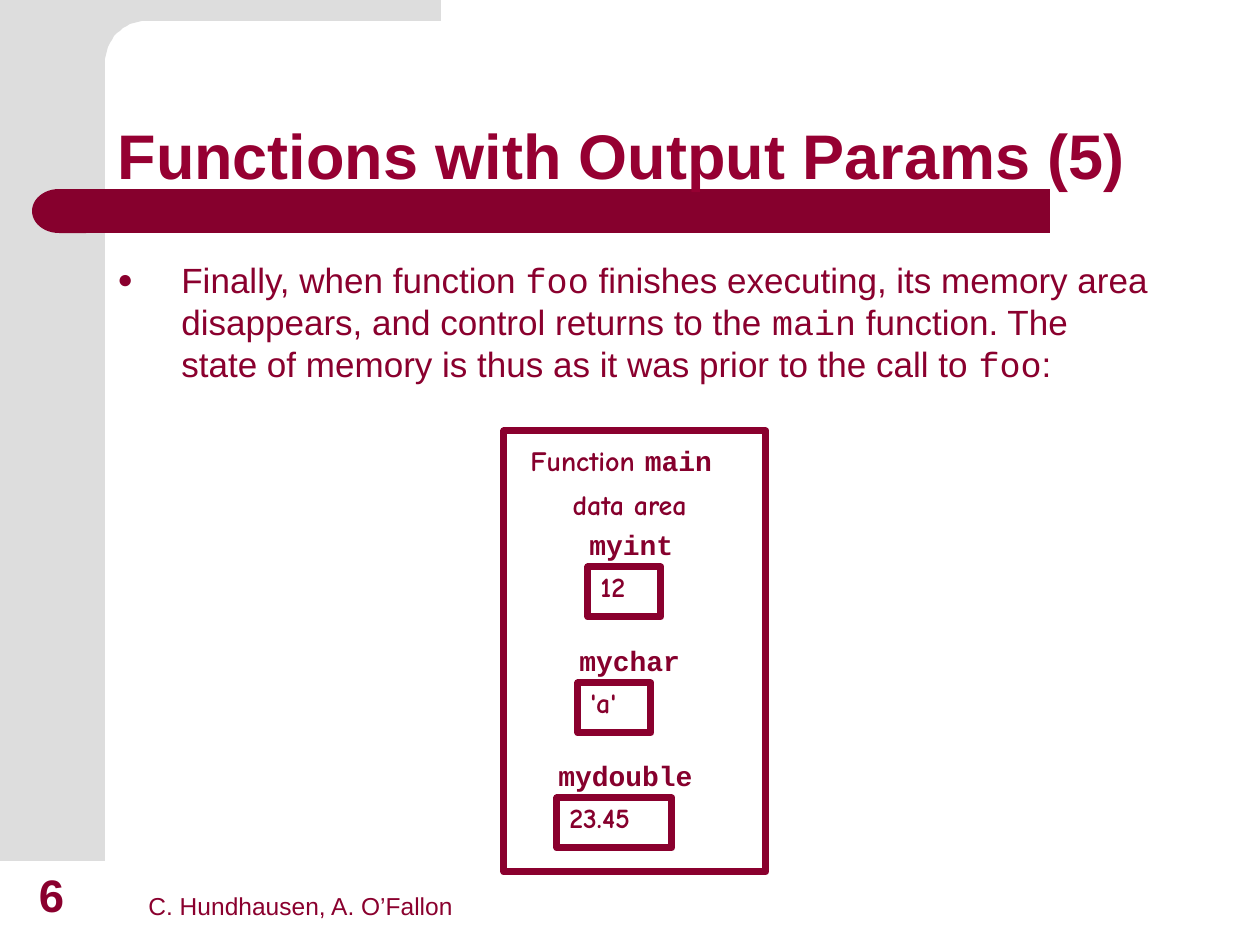
from dataclasses import dataclass
from math import cos, pi, sin

from lxml.etree import SubElement
from pptx import Presentation
from pptx.dml.color import RGBColor
from pptx.enum.shapes import MSO_SHAPE
from pptx.enum.text import MSO_ANCHOR, MSO_AUTO_SIZE, PP_ALIGN
from pptx.oxml.ns import qn
from pptx.util import Emu, Pt


@dataclass(frozen=True)
class Theme:
    gray: str = "DDDDDD"
    crimson: str = "86002D"
    ink: str = "8A002E"
    title: str = "960032"
    sans: str = "Arial"
    code: str = "Courier New"
    hand: str = "Comic Neue"
    title_size: int = 36
    number_size: int = 26
    body_size: int = 20
    label_size: int = 16
    footer_size: int = 14


theme = Theme()
PX = 914400 / 126  # EMU in one px


def frame(left, top, width, height):
    return [Emu(round(value * PX)) for value in (left, top, width, height)]


def write(box, *lines, size, color, bold=False, align=PP_ALIGN.LEFT,
          anchor=MSO_ANCHOR.TOP, spacing=None, gap=0, bullet=None, indent=0):
    """Fill a box; each line is a list of (text, font) spans."""
    text = box.text_frame
    text.word_wrap = True
    text.auto_size = MSO_AUTO_SIZE.NONE
    text.vertical_anchor = anchor
    for index, line in enumerate(lines):
        para = text.add_paragraph() if index else text.paragraphs[0]
        para.alignment = align
        para.line_spacing = spacing
        if index:
            para.space_before = Pt(gap)
        if bullet:
            properties = para._p.get_or_add_pPr()
            properties.set("marL", str(round(indent * PX)))
            properties.set("indent", str(-round(indent * PX)))
            SubElement(properties, qn("a:buSzPct")).set("val", "75000")
            SubElement(properties, qn("a:buFont")).set("typeface", theme.sans)
            SubElement(properties, qn("a:buChar")).set("char", bullet)
        for words, font in line:
            span = para.add_run()
            span.text = words
            span.font.name = font
            span.font.size = Pt(size)
            span.font.bold = bold
            span.font.color.rgb = RGBColor.from_string(color)


deck = Presentation()
deck.slide_width, deck.slide_height = frame(0, 0, 1260, 945)[2:]
page = deck.slides.add_slide(deck.slide_layouts[5])
shapes = page.shapes

# Gray side band and its rounded inner corner
band = shapes.add_shape(MSO_SHAPE.RECTANGLE, *frame(0, 0, 105, 861))
arc = [(146 - 41 * sin(step * pi / 32), 63 - 42 * cos(step * pi / 32))
       for step in range(17)]
outline = shapes.build_freeform(441, 0, scale=PX)
outline.add_line_segments([(441, 21), *arc, (105, 77), (63, 77), (63, 0)])
corner = outline.convert_to_shape()

# Crimson bar with a round left end
bar = shapes.add_shape(MSO_SHAPE.RECTANGLE, *frame(84, 189, 966, 44))
cap = shapes.add_shape(MSO_SHAPE.FLOWCHART_DELAY, *frame(32, 189, 54, 44))
cap.rotation = 180

for part, color in ((band, theme.gray), (corner, theme.gray),
                    (bar, theme.crimson), (cap, theme.crimson)):
    part.shadow.inherit = False
    part.fill.solid()
    part.fill.fore_color.rgb = RGBColor.from_string(color)
    part.line.fill.background()

# Title, in front of the bar
title = shapes.title
title.left, title.top, title.width, title.height = frame(105, 42, 1092, 157)
write(title, [("Functions with Output Params (5)", theme.sans)],
      size=theme.title_size, color=theme.title, bold=True,
      anchor=MSO_ANCHOR.BOTTOM, spacing=0.9)
shapes._spTree.append(title._element)

# Footer and slide number
footer = shapes.add_textbox(*frame(136, 861, 473, 66))
write(footer, [("C. Hundhausen, A. O’Fallon", theme.sans)],
      size=theme.footer_size, color=theme.ink, anchor=MSO_ANCHOR.BOTTOM)
number = shapes.add_textbox(*frame(11, 861, 81, 67))
write(number, [("6", theme.sans)], size=theme.number_size, color=theme.ink,
      bold=True, align=PP_ALIGN.CENTER, anchor=MSO_ANCHOR.BOTTOM)

# Body
body = shapes.add_textbox(*frame(105, 252, 1060, 136))
write(body, [
    ("Finally, when function ", theme.sans),
    ("foo", theme.code),
    (" finishes executing, its memory area disappears, and control "
     "returns to the ", theme.sans),
    ("main", theme.code),
    (" function. The state of memory is thus as it was prior to the "
     "call to ", theme.sans),
    ("foo", theme.code),
    (":", theme.sans),
], size=theme.body_size, color=theme.ink, bullet="●", indent=64)

# Memory diagram: data area of main
label_style = dict(size=theme.label_size, color=theme.crimson, bold=True,
                   spacing=0.9)
heading = shapes.add_textbox(*frame(514, 441, 231, 91))
write(heading, [("Function ", theme.hand), ("main ", theme.code)],
      [("data area", theme.hand)], align=PP_ALIGN.CENTER, gap=8, **label_style)
outlined = [shapes.add_shape(MSO_SHAPE.RECTANGLE, *frame(504, 431, 262, 441))]

# Variables: name above a value cell
variables = (("myint", "12", 588, 567, 73, 126),
             ("mychar", "'a'", 578, 683, 73, 147),
             ("mydouble", "23.45", 557, 798, 115, 189))
for name, value, left, top, cell_width, name_width in variables:
    cell = shapes.add_shape(MSO_SHAPE.RECTANGLE,
                            *frame(left, top, cell_width, 50))
    write(cell, [(value, theme.hand)], **label_style)
    outlined.append(cell)
    label = shapes.add_textbox(*frame(left - 11, top - 42, name_width, 43))
    write(label, [(name, theme.code)], **label_style)

for box in outlined:
    box.shadow.inherit = False
    box.fill.background()
    box.line.color.rgb = RGBColor.from_string(theme.ink)
    box.line.width = Pt(4)

deck.save("out.pptx")
